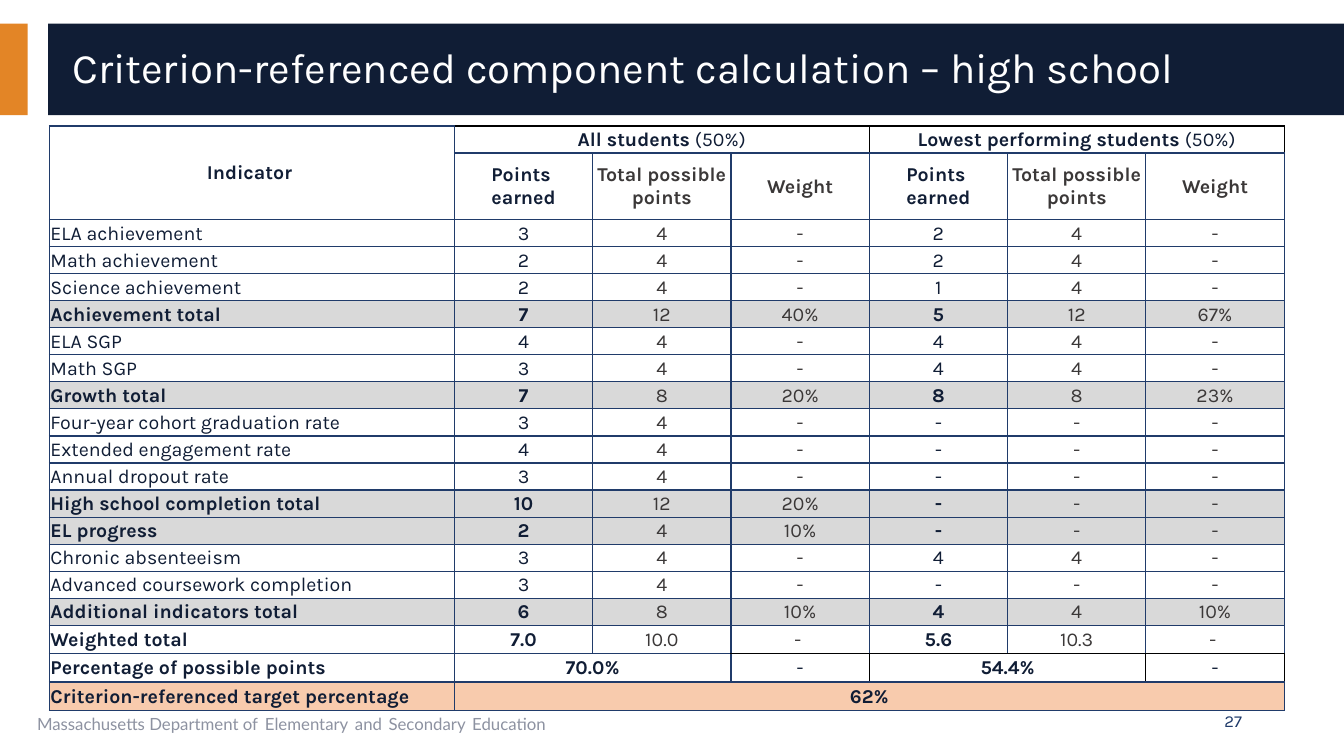
import dataclasses

import lxml.etree
import pptx
import pptx.dml.color
import pptx.enum.shapes
import pptx.enum.text
import pptx.oxml.ns
import pptx.util

Pt = pptx.util.Pt
ALIGN = pptx.enum.text.PP_ALIGN
ANCHOR = pptx.enum.text.MSO_ANCHOR


@dataclasses.dataclass(frozen=True)
class Theme:
    font: str = "Karla"
    footer_font: str = "Lato"
    navy: str = "101D35"
    blue: str = "203B6A"
    orange: str = "E38526"
    white: str = "FFFFFF"
    charcoal: str = "3B3838"
    footer: str = "8D92A1"
    black: str = "000000"
    total: str = "D9D9D9"
    target: str = "F8CBAD"
    title_size: float = 30
    table_size: float = 14
    footer_size: float = 12
    footer_space: float = 18


THEME = Theme()

COLUMN_WIDTHS = [289.3] + [98.8] * 6
ROW_HEIGHTS = [19.35, 47.4] + [19.35] * 15 + [20.2] * 3

INDICATORS = [
    ("ELA achievement", "3", "4", "-", "2", "4", "-"),
    ("Math achievement", "2", "4", "-", "2", "4", "-"),
    ("Science achievement", "2", "4", "-", "1", "4", "-"),
    ("Achievement total", "7", "12", "40%", "5", "12", "67%"),
    ("ELA SGP", "4", "4", "-", "4", "4", "-"),
    ("Math SGP", "3", "4", "-", "4", "4", "-"),
    ("Growth total", "7", "8", "20%", "8", "8", "23%"),
    ("Four-year cohort graduation rate", "3", "4", "-", "-", "-", "-"),
    ("Extended engagement rate", "4", "4", "-", "-", "-", "-"),
    ("Annual dropout rate", "3", "4", "-", "-", "-", "-"),
    ("High school completion total", "10", "12", "20%", "-", "-", "-"),
    ("EL progress", "2", "4", "10%", "-", "-", "-"),
    ("Chronic absenteeism", "3", "4", "-", "4", "4", "-"),
    ("Advanced coursework completion", "3", "4", "-", "-", "-", "-"),
    ("Additional indicators total", "6", "8", "10%", "4", "4", "10%"),
    ("Weighted total", "7.0", "10.0", "- ", "5.6", "10.3", "- "),
]
SHADED = {"Achievement total", "Growth total", "High school completion total",
          "EL progress", "Additional indicators total"}
STRONG = SHADED | {"Weighted total"}

FIRST_ROW, WEIGHTED_ROW, PERCENT_ROW, TARGET_ROW = 2, 17, 18, 19
BLACK_SIDES = {
    (0, 1): "TR", (0, 2): "T", (0, 3): "TR",
    (0, 4): "LTR", (0, 5): "T", (0, 6): "TR",
    (PERCENT_ROW, 3): "TR", (PERCENT_ROW, 4): "LTR",
    (PERCENT_ROW, 5): "TR", (PERCENT_ROW, 6): "LTR",
    **{(WEIGHTED_ROW, column): "B" for column in range(3, 7)},
}
MERGES = [(0, 0, 1, 0), (0, 1, 0, 3), (0, 4, 0, 6),
          (PERCENT_ROW, 1, PERCENT_ROW, 2), (PERCENT_ROW, 4, PERCENT_ROW, 5),
          (TARGET_ROW, 1, TARGET_ROW, 6)]


def rgb(color):
    return pptx.dml.color.RGBColor.from_string(color)


def add_span(para, text, size=THEME.table_size, color=THEME.navy, bold=False, font=THEME.font):
    span = para.add_run()
    span.text = text
    span.font.size = Pt(size)
    span.font.name = font
    span.font.bold = bold
    span.font.color.rgb = rgb(color)


def add_bar(page, left, width, color):
    bar = page.shapes.add_shape(pptx.enum.shapes.MSO_SHAPE.RECTANGLE,
                                Pt(left), Pt(16.8), Pt(width), Pt(65.4))
    bar.shadow.inherit = False
    bar.fill.solid()
    bar.fill.fore_color.rgb = rgb(color)
    bar.line.fill.background()


def add_box(page, left, top, width, height, anchor=ANCHOR.MIDDLE, align=ALIGN.LEFT):
    box = page.shapes.add_textbox(Pt(left), Pt(top), Pt(width), Pt(height))
    box.text_frame.word_wrap = True
    box.text_frame.vertical_anchor = anchor
    para = box.text_frame.paragraphs[0]
    para.alignment = align
    return para


def draw_borders(cell, black_sides):
    properties = cell._tc.get_or_add_tcPr()
    for side in "LRTB":
        line = lxml.etree.SubElement(properties, pptx.oxml.ns.qn(f"a:ln{side}"), w=str(Pt(1)))
        fill = lxml.etree.SubElement(line, pptx.oxml.ns.qn("a:solidFill"))
        color = THEME.black if side in black_sides else THEME.blue
        lxml.etree.SubElement(fill, pptx.oxml.ns.qn("a:srgbClr"), val=color)


def format_cell(cell, black_sides, fill):
    cell.margin_left = cell.margin_right = cell.margin_top = Pt(0.72)
    cell.margin_bottom = 0
    cell.vertical_anchor = ANCHOR.MIDDLE
    draw_borders(cell, black_sides)
    if fill:
        cell.fill.solid()
        cell.fill.fore_color.rgb = rgb(fill)
    else:
        cell.fill.background()


def write_cell(cell, text, align=ALIGN.CENTER, note="", **style):
    frame = cell.text_frame
    for index, line in enumerate(text.split("\n")):
        para = frame.add_paragraph() if index else frame.paragraphs[0]
        para.alignment = align
        add_span(para, line, **style)
    if note:
        add_span(para, note)


def row_fill(row):
    if row == TARGET_ROW:
        return THEME.target
    if FIRST_ROW <= row < PERCENT_ROW and INDICATORS[row - FIRST_ROW][0] in SHADED:
        return THEME.total
    return None


def write_headings(table):
    write_cell(table.cell(0, 0), "Indicator ", bold=True)
    for column, group in ((1, "All students"), (4, "Lowest performing students")):
        write_cell(table.cell(0, column), group, note=" (50%)", bold=True)
        write_cell(table.cell(1, column), "Points \nearned", bold=True)
        write_cell(table.cell(1, column + 1), "Total possible points",
                   color=THEME.charcoal, bold=True)
        write_cell(table.cell(1, column + 2), "Weight", color=THEME.charcoal, bold=True)


def write_indicators(table):
    for row, (label, *values) in enumerate(INDICATORS, FIRST_ROW):
        strong = label in STRONG
        write_cell(table.cell(row, 0), label, align=ALIGN.LEFT, bold=strong)
        for column, value in enumerate(values, 1):
            earned = column in (1, 4)
            write_cell(table.cell(row, column), value, bold=strong and earned,
                       color=THEME.navy if earned else THEME.charcoal)


def write_results(table):
    for row, label in ((PERCENT_ROW, "Percentage of possible points"),
                       (TARGET_ROW, "Criterion-referenced target percentage")):
        write_cell(table.cell(row, 0), label, align=ALIGN.LEFT, bold=True)
    for column, value in ((1, "70.0%"), (3, "-"), (4, "54.4%"), (6, "-")):
        write_cell(table.cell(PERCENT_ROW, column), value, bold=value != "-")
    write_cell(table.cell(TARGET_ROW, 1), "62%", bold=True)


def add_score_table(page):
    table = page.shapes.add_table(len(ROW_HEIGHTS), len(COLUMN_WIDTHS), Pt(35.3), Pt(90),
                                  Pt(sum(COLUMN_WIDTHS)), Pt(sum(ROW_HEIGHTS))).table
    table.first_row = table.horz_banding = False
    for column, width in zip(table.columns, COLUMN_WIDTHS):
        column.width = Pt(width)
    for row, height in enumerate(ROW_HEIGHTS):
        table.rows[row].height = Pt(height)
        for column in range(len(COLUMN_WIDTHS)):
            format_cell(table.cell(row, column), BLACK_SIDES.get((row, column), ""), row_fill(row))
    for top, left, bottom, right in MERGES:
        table.cell(top, left).merge(table.cell(bottom, right))
    write_headings(table)
    write_indicators(table)
    write_results(table)


def add_footer(page):
    para = add_box(page, 19.4, 500.4, 607.7, 28.8, anchor=ANCHOR.TOP)
    for index, words in enumerate(("Massachusetts Department of", "Elementary",
                                   "and", "Secondary", "Education")):
        if index:
            add_span(para, " ", size=THEME.footer_space, color=THEME.blue, font=THEME.footer_font)
        add_span(para, words, size=THEME.footer_size, color=THEME.footer, font=THEME.footer_font)
    number = add_box(page, 678.2, 500.4, 216, 28.8, align=ALIGN.RIGHT)
    add_span(number, "27", size=THEME.footer_size, color=THEME.blue)


def main():
    deck = pptx.Presentation()
    deck.slide_width, deck.slide_height = Pt(960), Pt(540)
    page = deck.slides.add_slide(deck.slide_layouts[6])
    add_bar(page, 0, 19.7, THEME.orange)
    add_bar(page, 34.3, 925.7, THEME.navy)
    title = add_box(page, 44.6, 23, 895.7, 53.3)
    title.line_spacing = 0.9
    add_span(title, "Criterion-referenced component calculation – high school",
             size=THEME.title_size, color=THEME.white)
    add_footer(page)
    add_score_table(page)
    deck.save("out.pptx")


if __name__ == "__main__":
    main()
